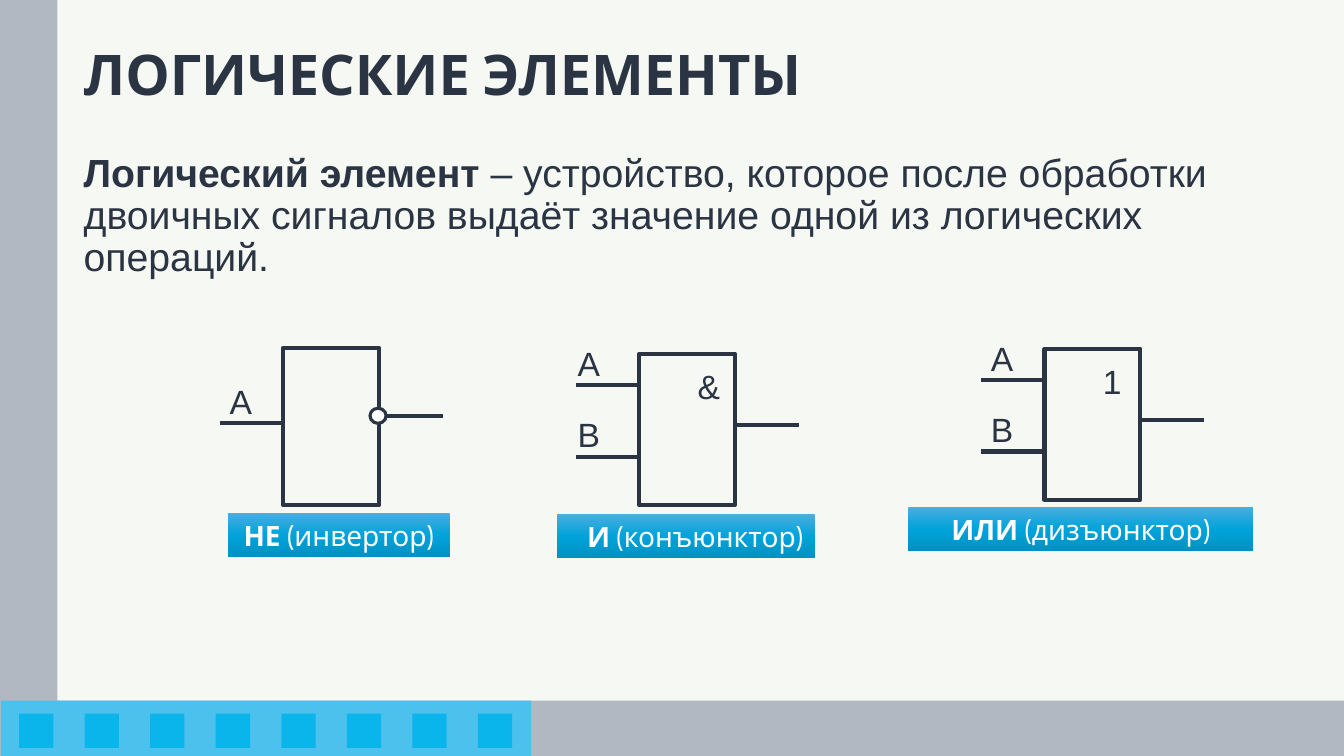
import copy
from dataclasses import dataclass

import pptx
import pptx.util
import pptx.dml.color
import pptx.enum.shapes
import pptx.enum.text
import pptx.oxml
import pptx.oxml.ns

Inches, Pt = pptx.util.Inches, pptx.util.Pt
SHAPE = pptx.enum.shapes.MSO_SHAPE
ANCHOR = pptx.enum.text.MSO_ANCHOR
ALIGN = pptx.enum.text.PP_ALIGN
FIT = pptx.enum.text.MSO_AUTO_SIZE


@dataclass(frozen=True)
class Theme:
    paper: str = "F6F8F3"
    ink: str = "2A3442"
    white: str = "FFFFFF"
    frame: str = "B2B8C2"
    strip: str = "4DC1ED"
    square: str = "0AB5EC"
    caption_stops: tuple = ((0, "4BADE0"), (0.5, "00A3DA"), (1, "0091C2"))
    head_font: str = "Cabin"
    text_font: str = "Arial"
    title_size: int = 40
    body_size: int = 28
    sign_size: int = 24
    caption_size: int = 20
    stroke: float = 3
    thin_stroke: float = 2.25


def rgb(value):
    return pptx.dml.color.RGBColor.from_string(value)


class Deck:
    def __init__(self, prs, theme):
        self.t = theme
        self.s = prs.slides.add_slide(prs.slide_layouts[1])
        self.s.background.fill.solid()
        self.s.background.fill.fore_color.rgb = rgb(theme.paper)

    def run(self, p, text, size, font, color, bold=False):
        r = p.add_run()
        r.text = text
        r.font.size, r.font.name, r.font.bold = Pt(size), font, bold
        r.font.color.rgb = rgb(color)

    def shape(self, x, y, w, h, fill=None, stroke=None, kind=SHAPE.RECTANGLE):
        sp = self.s.shapes.add_shape(kind, Inches(x), Inches(y), Inches(w), Inches(h))
        sp.shadow.inherit = False
        if fill:
            sp.fill.solid()
            sp.fill.fore_color.rgb = rgb(fill)
        else:
            sp.fill.background()
        if stroke:
            sp.line.color.rgb = rgb(self.t.ink)
            sp.line.width = Pt(stroke)
        else:
            sp.line.fill.background()
        return sp

    def wire(self, x1, x2, y):
        c = self.s.shapes.add_connector(
            pptx.enum.shapes.MSO_CONNECTOR.STRAIGHT,
            Inches(x1), Inches(y), Inches(x2), Inches(y))
        c.line.color.rgb = rgb(self.t.ink)
        c.line.width = Pt(self.t.stroke)
        c._element.spPr.append(pptx.oxml.parse_xml(
            "<a:effectLst %s/>" % pptx.oxml.ns.nsdecls("a")))

    def sign(self, x, y, text):
        sp = self.s.shapes.add_textbox(Inches(x), Inches(y), Inches(0.39), Inches(0.5))
        sp.text_frame.word_wrap = True
        self.run(sp.text_frame.paragraphs[0], text, self.t.sign_size,
                 self.t.text_font, self.t.ink)

    def caption(self, x, y, w, name, role, shift=0):
        sp = self.shape(x, y, w, 0.44)
        sp.fill.gradient()
        sp.fill.gradient_angle = 270
        stops = sp._element.spPr.xpath(".//a:gsLst")[0]
        stops.append(copy.deepcopy(stops[-1]))
        for stop, (pos, color) in zip(sp.fill.gradient_stops, self.t.caption_stops):
            stop.position, stop.color.rgb = pos, rgb(color)
        tf = sp.text_frame
        tf.word_wrap, tf.vertical_anchor = True, ANCHOR.MIDDLE
        tf.margin_left, tf.margin_right = Inches(0.08 + shift), Inches(0.08)
        p = tf.paragraphs[0]
        p.alignment = ALIGN.CENTER
        for text, bold in ((name, True), (" " + role, False)):
            self.run(p, text, self.t.caption_size, self.t.head_font, self.t.white, bold)

    def gate(self, x, y, h, inputs, output_dy, sign=None, sign_dx=-0.63):
        w, lead = 0.95, 0.63
        self.shape(x, y, w, h, stroke=self.t.stroke)
        for text, dy in inputs:
            self.wire(x - lead, x, y + dy)
            self.sign(x + sign_dx, y + dy - 0.47, text)
        self.wire(x + w, x + w + lead, y + output_dy)
        if sign:
            self.sign(x + 0.48, y + 0.07, sign)

    def placeholder(self, sp, y, h, runs, size, font, anchor):
        sp.left, sp.top, sp.width, sp.height = map(Inches, (0.73, y, 11.88, h))
        tf = sp.text_frame
        tf.word_wrap, tf.auto_size, tf.vertical_anchor = True, FIT.NONE, anchor
        p = tf.paragraphs[0]
        p.alignment, p.line_spacing = ALIGN.LEFT, 0.9
        for text, bold in runs:
            self.run(p, text, size, font, self.t.ink, bold)
        return p

    def title(self, text):
        self.placeholder(self.s.shapes.title, 0.04, 1.45, [(text, True)],
                         self.t.title_size, self.t.head_font, ANCHOR.MIDDLE)

    def body(self, runs):
        p = self.placeholder(self.s.placeholders[1], 1.47, 1.37, runs,
                             self.t.body_size, self.t.text_font, ANCHOR.TOP)
        p.space_before = Pt(10)
        pPr = p._p.get_or_add_pPr()
        pPr.set("marL", "0")
        pPr.set("indent", "0")
        pPr.append(pptx.oxml.parse_xml("<a:buNone %s/>" % pptx.oxml.ns.nsdecls("a")))


def main():
    prs = pptx.Presentation()
    prs.slide_width, prs.slide_height = Inches(13.33), Inches(7.5)
    t = Theme()
    deck = Deck(prs, t)

    # Frame and strip of squares
    deck.shape(0, 0, 0.57, 7.5, t.frame)
    deck.shape(0, 6.95, 13.33, 0.55, t.frame)
    deck.shape(0.01, 6.95, 5.26, 0.55, t.strip)
    for i in range(8):
        deck.shape(0.19 + 0.65 * i, 7.08, 0.34, 0.34, t.square)

    # Title and definition
    deck.title("ЛОГИЧЕСКИЕ ЭЛЕМЕНТЫ")
    deck.body([
        ("Логический элемент ", True),
        ("– устройство, которое после обработки двоичных сигналов "
         "выдаёт значение одной из логических операций.", False),
    ])

    # Inverter
    deck.gate(2.81, 3.45, 1.56, [("А", 0.75)], 0.68)
    deck.shape(3.67, 4.05, 0.16, 0.15, t.white, t.thin_stroke, SHAPE.OVAL)
    deck.caption(2.26, 5.09, 2.2, "НЕ", "(инвертор)")

    # Conjunction and disjunction
    pair = [("А", 0.31), ("В", 1.02)]
    deck.gate(6.34, 3.51, 1.5, pair, 0.71, "&", sign_dx=-0.71)
    deck.caption(5.52, 5.1, 2.56, "И", "(конъюнктор)", shift=0.19)
    deck.gate(10.36, 3.46, 1.5, pair, 0.71, "1")
    deck.caption(9.01, 5.03, 3.42, "ИЛИ", "(дизъюнктор)")

    prs.save("out.pptx")


if __name__ == "__main__":
    main()
